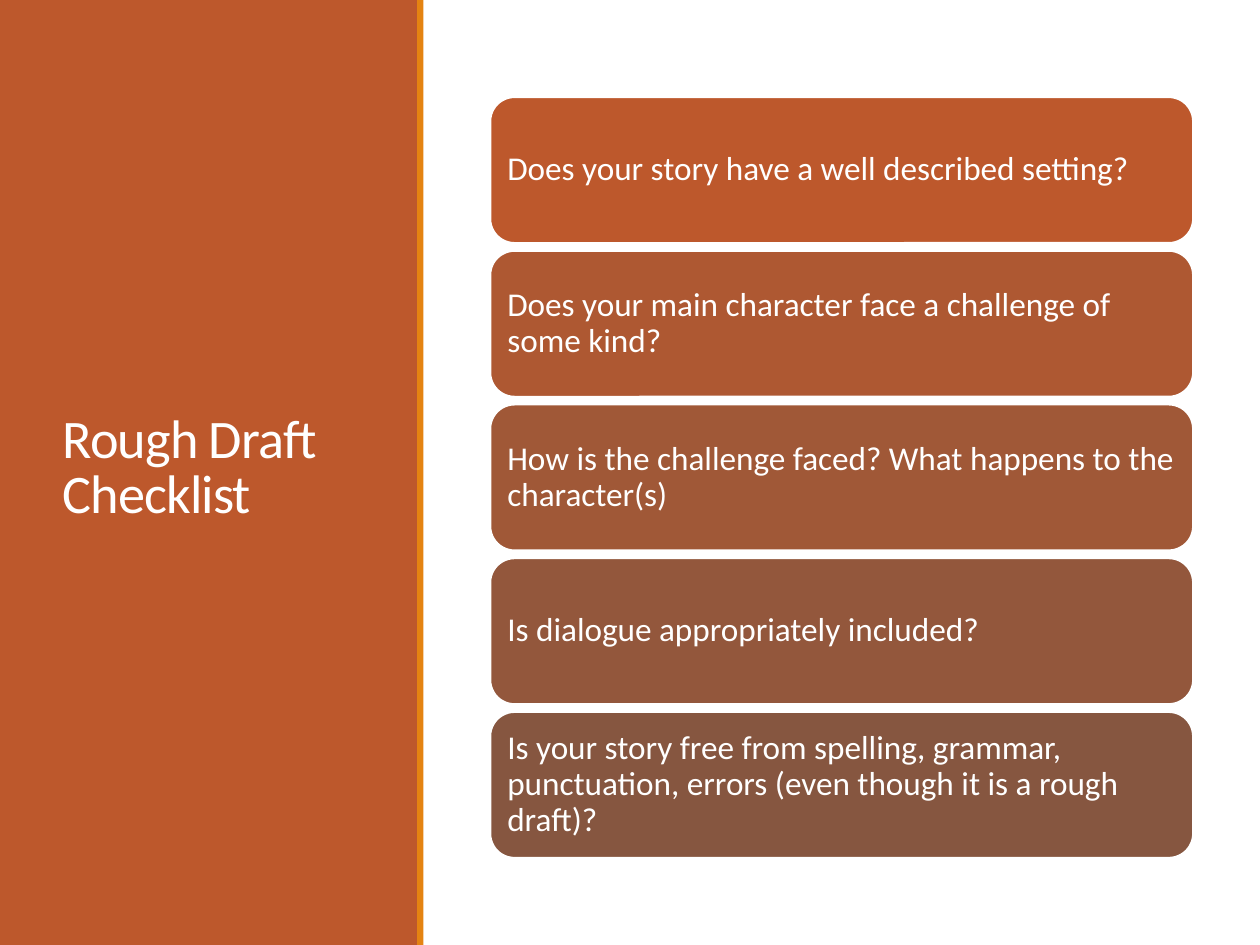
from dataclasses import dataclass

from pptx import Presentation
from pptx.dml.color import RGBColor
from pptx.enum.shapes import MSO_SHAPE as Preset
from pptx.enum.text import MSO_ANCHOR as Anchor, PP_ALIGN as Align
from pptx.shapes.autoshape import Shape
from pptx.slide import Slide
from pptx.util import Inches, Pt

FONT = "Calibri"
WHITE = RGBColor(0xFF, 0xFF, 0xFF)
RUST = RGBColor(0xBD, 0x58, 0x2C)
ORANGE = RGBColor(0xE4, 0x83, 0x12)

CARD_LEFT, CARD_TOP = 3.89, 0.77
CARD_WIDTH, CARD_HEIGHT = 5.58, 1.16
CARD_PITCH = 1.22


@dataclass(frozen=True)
class Question:
    text: str
    fill: RGBColor


QUESTIONS = [
    Question("Does your story have a well described setting?", RUST),
    Question("Does your main character face a challenge of some kind?",
             RGBColor(0xAE, 0x58, 0x32)),
    Question("How is the challenge faced? What happens to the character(s)",
             RGBColor(0xA0, 0x58, 0x37)),
    Question("Is dialogue appropriately included?", RGBColor(0x93, 0x57, 0x3C)),
    Question("Is your story free from spelling, grammar, punctuation, errors "
             "(even though it is a rough draft)?", RGBColor(0x86, 0x56, 0x40)),
]


def add_filled_shape(slide: Slide, preset: Preset, left: float, top: float,
                     width: float, height: float, fill: RGBColor) -> Shape:
    shape = slide.shapes.add_shape(
        preset, Inches(left), Inches(top), Inches(width), Inches(height))
    shape.shadow.inherit = False
    shape.fill.solid()
    shape.fill.fore_color.rgb = fill
    shape.line.fill.background()
    return shape


def write_text(shape: Shape, text: str, size: float, line_spacing: float) -> None:
    text_frame = shape.text_frame
    text_frame.word_wrap = True
    text_frame.vertical_anchor = Anchor.MIDDLE
    text_frame.text = text
    paragraph = text_frame.paragraphs[0]
    paragraph.alignment = Align.LEFT
    paragraph.line_spacing = line_spacing
    font = paragraph.runs[0].font
    font.name = FONT
    font.size = Pt(size)
    font.color.rgb = WHITE


def add_title(slide: Slide, text: str) -> None:
    title = slide.shapes.add_textbox(
        Inches(0.4), Inches(0.57), Inches(2.53), Inches(6.31))
    write_text(title, text, 31, 0.85)
    run = title.text_frame.paragraphs[0].runs[0]
    run.font._element.set("spc", "-50")


def add_question(slide: Slide, question: Question, top: float) -> None:
    card = add_filled_shape(slide, Preset.ROUNDED_RECTANGLE, CARD_LEFT, top,
                            CARD_WIDTH, CARD_HEIGHT, question.fill)
    card.line.color.rgb = WHITE
    card.line.width = Pt(1.25)
    text_frame = card.text_frame
    text_frame.margin_left = text_frame.margin_right = Inches(0.08)
    text_frame.margin_top = text_frame.margin_bottom = Inches(0.08)
    write_text(card, question.text, 19, 0.9)


def main() -> None:
    presentation = Presentation()
    presentation.slide_width = Inches(10)
    presentation.slide_height = Inches(7.5)
    slide = presentation.slides.add_slide(presentation.slide_layouts[6])

    add_filled_shape(slide, Preset.RECTANGLE, 0, 0, 3.32, 7.5, RUST)
    add_title(slide, "Rough Draft Checklist")
    add_filled_shape(slide, Preset.RECTANGLE, 3.31, 0, 0.05, 7.5, ORANGE)
    for index, question in enumerate(QUESTIONS):
        add_question(slide, question, CARD_TOP + index * CARD_PITCH)

    presentation.save("out.pptx")


if __name__ == "__main__":
    main()
